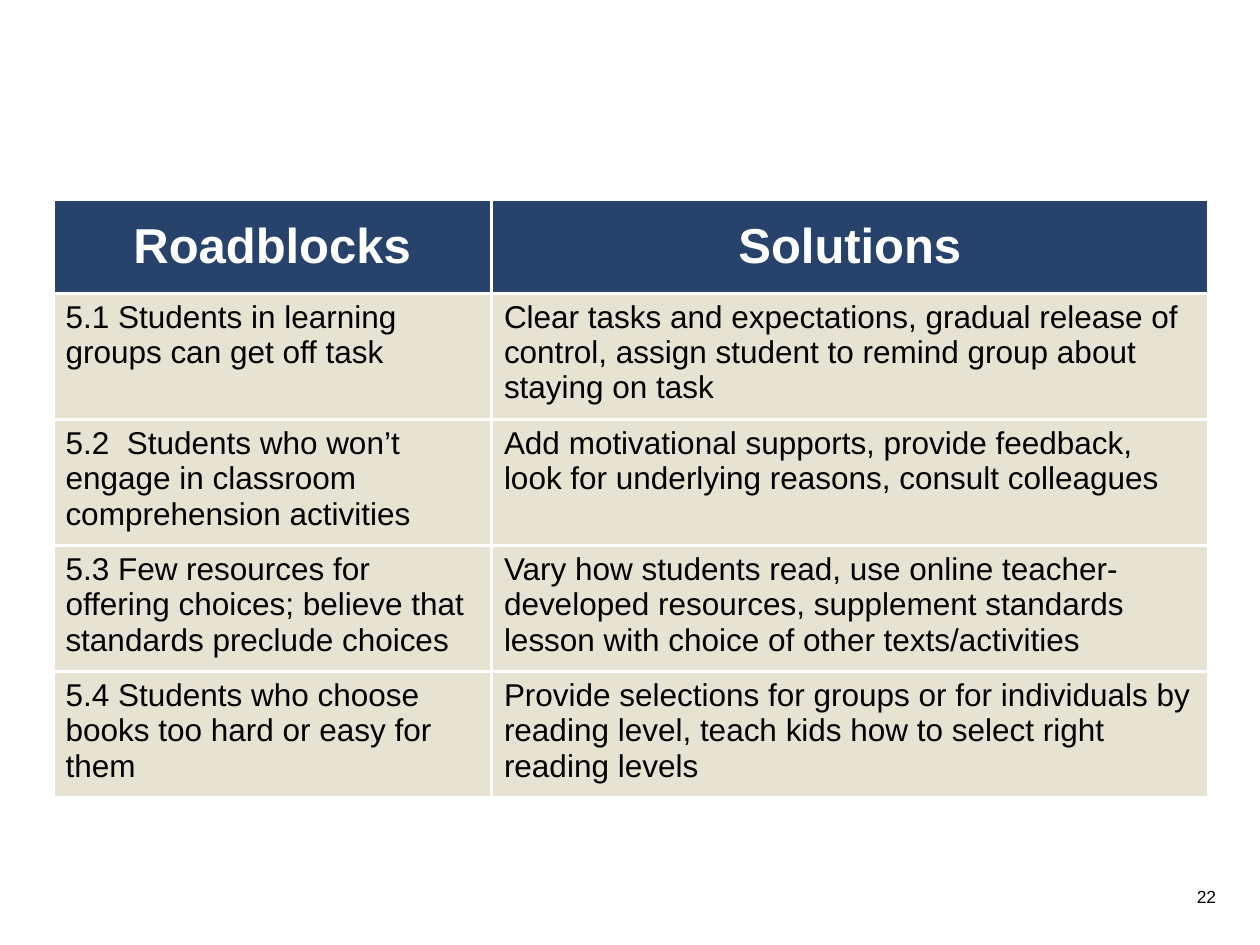
from lxml import etree
from pptx import Presentation
from pptx.dml.color import RGBColor
from pptx.enum.text import MSO_ANCHOR, MSO_AUTO_SIZE, PP_ALIGN
from pptx.oxml.ns import qn
from pptx.util import Inches, Pt

LEFT, CENTER, RIGHT = PP_ALIGN.LEFT, PP_ALIGN.CENTER, PP_ALIGN.RIGHT
TOP, MIDDLE = MSO_ANCHOR.TOP, MSO_ANCHOR.MIDDLE
FIT_SHAPE = MSO_AUTO_SIZE.SHAPE_TO_FIT_TEXT

FONT = "Arial"
COLORS = {
    "header": "27436C",
    "body": "E6E3D2",
    "white": "FFFFFF",
    "black": "000000",
}
COLUMN_WIDTHS = [3.48, 5.69]
HEADER_HEIGHT = 0.75
ROW_HEIGHT = 1
BORDER_WIDTH = 2.25

HEADINGS = ("Roadblocks", "Solutions")
ROADBLOCKS = [
    ("5.1 Students in learning groups can get off task",
     "Clear tasks and expectations, gradual release of control, "
     "assign student to remind group about staying on task"),
    ("5.2  Students who won’t engage in classroom comprehension activities",
     "Add motivational supports, provide feedback, "
     "look for underlying reasons, consult colleagues"),
    ("5.3 Few resources for offering choices; "
     "believe that standards preclude choices",
     "Vary how students read, use online teacher-developed resources, "
     "supplement standards lesson with choice of other texts/activities"),
    ("5.4 Students who choose books too hard or easy for them",
     "Provide selections for groups or for individuals by reading level, "
     "teach kids how to select right reading levels"),
]


def write_text(text_frame, text, size, color, align=LEFT, bold=False):
    paragraph = text_frame.paragraphs[0]
    paragraph.alignment = align
    run = paragraph.add_run()
    run.text = text
    run.font.name = FONT
    run.font.size = Pt(size)
    run.font.bold = bold
    run.font.color.rgb = RGBColor.from_string(COLORS[color])


def set_borders(cell, sides):
    properties = cell._tc.get_or_add_tcPr()
    for index, side in enumerate(sides):
        line = etree.Element(qn(f"a:ln{side}"), w=str(Pt(BORDER_WIDTH)))
        fill = etree.SubElement(line, qn("a:solidFill"))
        etree.SubElement(fill, qn("a:srgbClr"), val=COLORS["white"])
        properties.insert(index, line)


def fill_cell(cell, text, is_header):
    cell.fill.solid()
    fill_color = COLORS["header" if is_header else "body"]
    cell.fill.fore_color.rgb = RGBColor.from_string(fill_color)
    set_borders(cell, "LRTB")
    if is_header:
        cell.vertical_anchor = MIDDLE
        write_text(cell.text_frame, text, 28, "white", CENTER, bold=True)
    else:
        cell.vertical_anchor = TOP
        write_text(cell.text_frame, text, 18, "black")


def add_roadblock_table(slide):
    rows = [HEADINGS, *ROADBLOCKS]
    height = HEADER_HEIGHT + ROW_HEIGHT * len(ROADBLOCKS)
    table = slide.shapes.add_table(
        len(rows), len(HEADINGS), Inches(0.42), Inches(1.58),
        Inches(sum(COLUMN_WIDTHS)), Inches(height)).table
    for column, width in zip(table.columns, COLUMN_WIDTHS):
        column.width = Inches(width)
    for row_index, texts in enumerate(rows):
        is_header = row_index == 0
        table.rows[row_index].height = Inches(
            HEADER_HEIGHT if is_header else ROW_HEIGHT)
        for column_index, text in enumerate(texts):
            fill_cell(table.cell(row_index, column_index), text, is_header)


def add_page_number(slide, number):
    shape = slide.shapes.add_textbox(
        Inches(9.33), Inches(6.98), Inches(0.42), Inches(0.27))
    shape.text_frame.word_wrap = True
    shape.text_frame.auto_size = FIT_SHAPE
    write_text(shape.text_frame, number, 10, "black", RIGHT)


def main():
    presentation = Presentation()
    presentation.slide_width = Inches(10)
    presentation.slide_height = Inches(7.5)
    slide = presentation.slides.add_slide(presentation.slide_layouts[6])
    add_page_number(slide, "22")
    add_roadblock_table(slide)
    presentation.save("out.pptx")


if __name__ == "__main__":
    main()
